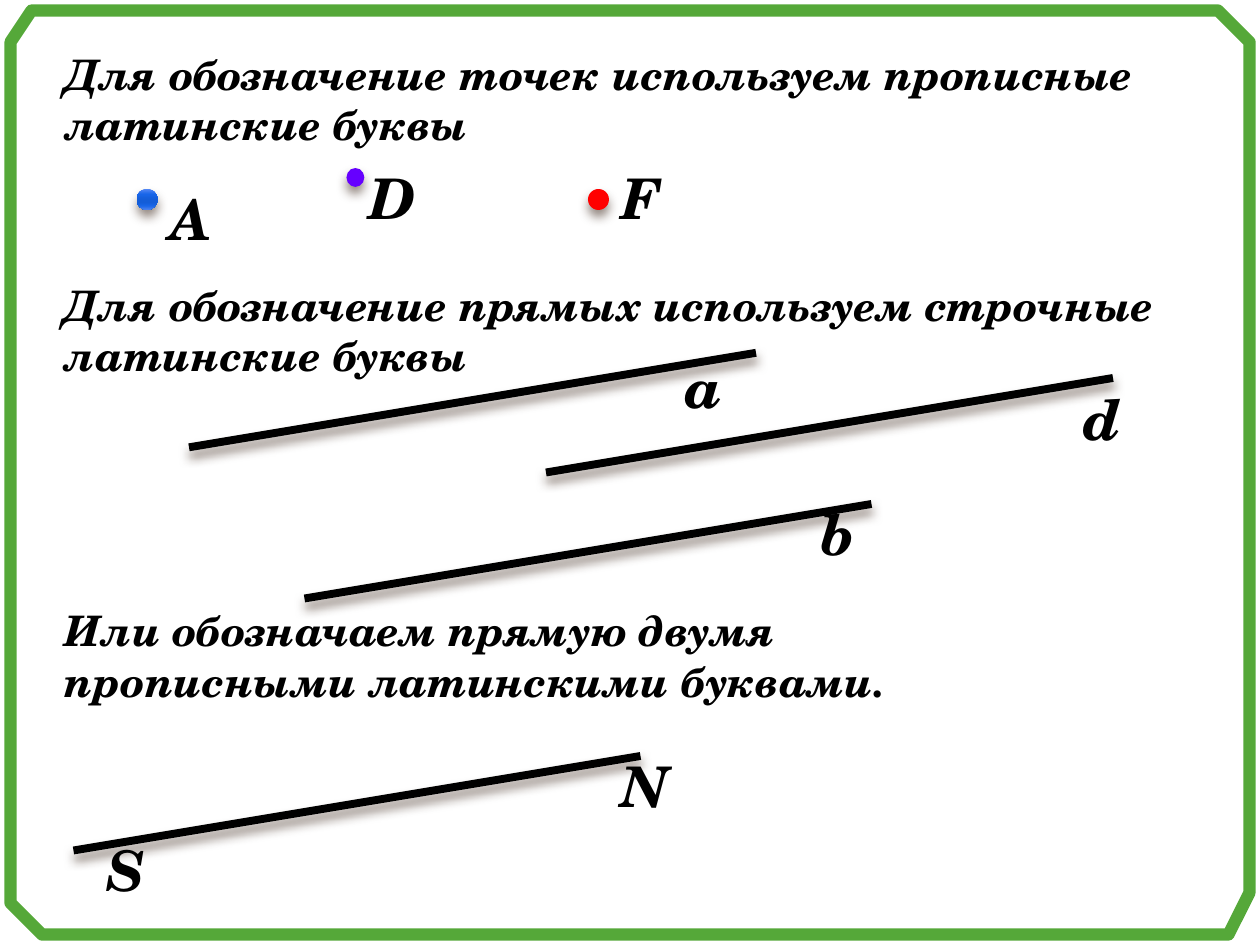
from lxml import etree
from pptx import Presentation
from pptx.dml.color import RGBColor
from pptx.enum.shapes import MSO_CONNECTOR, MSO_SHAPE
from pptx.enum.text import MSO_ANCHOR, MSO_AUTO_SIZE, PP_ALIGN
from pptx.util import Emu, Pt

PX = 7620  # EMU per px, 120 px to the inch
FONT = "TeX Gyre Schola"
A_NS = "http://schemas.openxmlformats.org/drawingml/2006/main"
OVAL = MSO_SHAPE.OVAL
STRAIGHT = MSO_CONNECTOR.STRAIGHT
TOP, LEFT = MSO_ANCHOR.TOP, PP_ALIGN.LEFT
FIT_TEXT = MSO_AUTO_SIZE.SHAPE_TO_FIT_TEXT

COLORS = {
    "ink": "000000",
    "frame": "55A839",
    "violet": "6600FF",
    "red": "FF0000",
    "shadow": "4E3B30",
}
BLUE_STOPS = [(0, "5588F5"), (25, "1865E8"), (50, "145DD8"),
              (65, "145DD8"), (80, "1865E7"), (100, "4C81EF")]


def px(*values):
    return [Emu(value * PX) for value in values]


def rgb(name):
    return RGBColor.from_string(COLORS[name])


def add_shadow(shape):
    """Soft shadow falling straight down."""
    shape._element.spPr.append(etree.fromstring(
        f'<a:effectLst xmlns:a="{A_NS}"><a:outerShdw blurRad="{Pt(6)}" '
        f'dist="{Pt(4)}" dir="5400000" rotWithShape="0">'
        f'<a:srgbClr val="{COLORS["shadow"]}"><a:alpha val="60000"/></a:srgbClr>'
        '</a:outerShdw></a:effectLst>'))


def fill_gradient(shape, stops):
    gradient_stops = "".join(
        f'<a:gs pos="{percent * 1000}"><a:srgbClr val="{color}"/></a:gs>'
        for percent, color in stops)
    shape._element.spPr.insert(2, etree.fromstring(
        f'<a:gradFill xmlns:a="{A_NS}" rotWithShape="1"><a:gsLst>{gradient_stops}'
        '</a:gsLst><a:lin ang="5400000" scaled="0"/></a:gradFill>'))


def write_text(box, text, size, wrap):
    frame = box.text_frame
    frame.text = text
    frame.word_wrap = wrap
    frame.auto_size = FIT_TEXT
    frame.vertical_anchor = TOP
    paragraph = frame.paragraphs[0]
    paragraph.alignment = LEFT
    font = paragraph.font
    font.name, font.size = FONT, Pt(size)
    font.bold = font.italic = True
    font.color.rgb = rgb("ink")


def add_letter(group, letter, left, top, width):
    box = group.shapes.add_textbox(*px(left, top, width, 77))
    write_text(box, letter, 32, wrap=False)


def add_point(group, left, top, width, height, color):
    point = group.shapes.add_shape(OVAL, *px(left, top, width, height))
    if color == "blue":
        fill_gradient(point, BLUE_STOPS)
    else:
        point.fill.solid()
        point.fill.fore_color.rgb = rgb(color)
    point.line.fill.background()
    add_shadow(point)


def add_named_line(slide, left, bottom, letters):
    """All lines share one length and slope; letters sit beside them."""
    group = slide.shapes.add_group_shape()
    line = group.shapes.add_connector(
        STRAIGHT, *px(left, bottom, left + 540, bottom - 90))
    line.line.color.rgb = rgb("ink")
    line.line.width = Pt(4.5)
    add_shadow(line)
    for letter in letters:
        add_letter(group, *letter)


def add_frame(slide):
    corners = [(10, 40), (10, 860), (40, 890), (1170, 890),
               (1190, 850), (1190, 40), (1160, 10), (30, 10)]
    builder = slide.shapes.build_freeform(*corners[0], scale=PX)
    builder.add_line_segments(corners[1:], close=True)
    frame = builder.convert_to_shape()
    frame.fill.background()
    frame.line.color.rgb = rgb("frame")
    frame.line.width = Pt(7)
    frame.shadow.inherit = False


def add_rule(slide, text, top, width):
    box = slide.shapes.add_textbox(*px(50, top, width, 109))
    write_text(box, text, 24, wrap=True)


def main():
    prs = Presentation()
    prs.slide_width, prs.slide_height = px(1200, 900)
    slide = prs.slides.add_slide(prs.slide_layouts[5])

    # Points: capital letters
    title = slide.shapes.title
    title.left, title.top, title.width, title.height = px(50, 40, 1120, 109)
    write_text(title, "Для обозначение точек используем прописные латинские буквы",
               24, wrap=True)
    points = slide.shapes.add_group_shape()
    add_point(points, 130, 180, 20, 20, "blue")
    add_point(points, 330, 160, 17, 18, "violet")
    add_point(points, 560, 180, 20, 20, "red")
    add_letter(points, "A", 150, 170, 65)
    add_letter(points, "D", 340, 150, 70)
    add_letter(points, "F", 580, 150, 60)

    # Lines: one small letter each
    add_rule(slide, "Для обозначение прямых используем строчные латинские буквы",
             260, 1120)
    add_named_line(slide, 180, 426, [("а", 640, 330, 60)])
    add_named_line(slide, 520, 450, [("d", 1020, 360, 60)])
    add_named_line(slide, 290, 570, [("b", 770, 470, 61)])

    # Line: two capital letters
    add_rule(slide, "Или обозначаем прямую двумя прописными латинскими буквами.",
             570, 841)
    add_named_line(slide, 70, 810, [("S", 90, 790, 59), ("N", 580, 710, 62)])

    add_frame(slide)
    prs.save("out.pptx")


if __name__ == "__main__":
    main()
